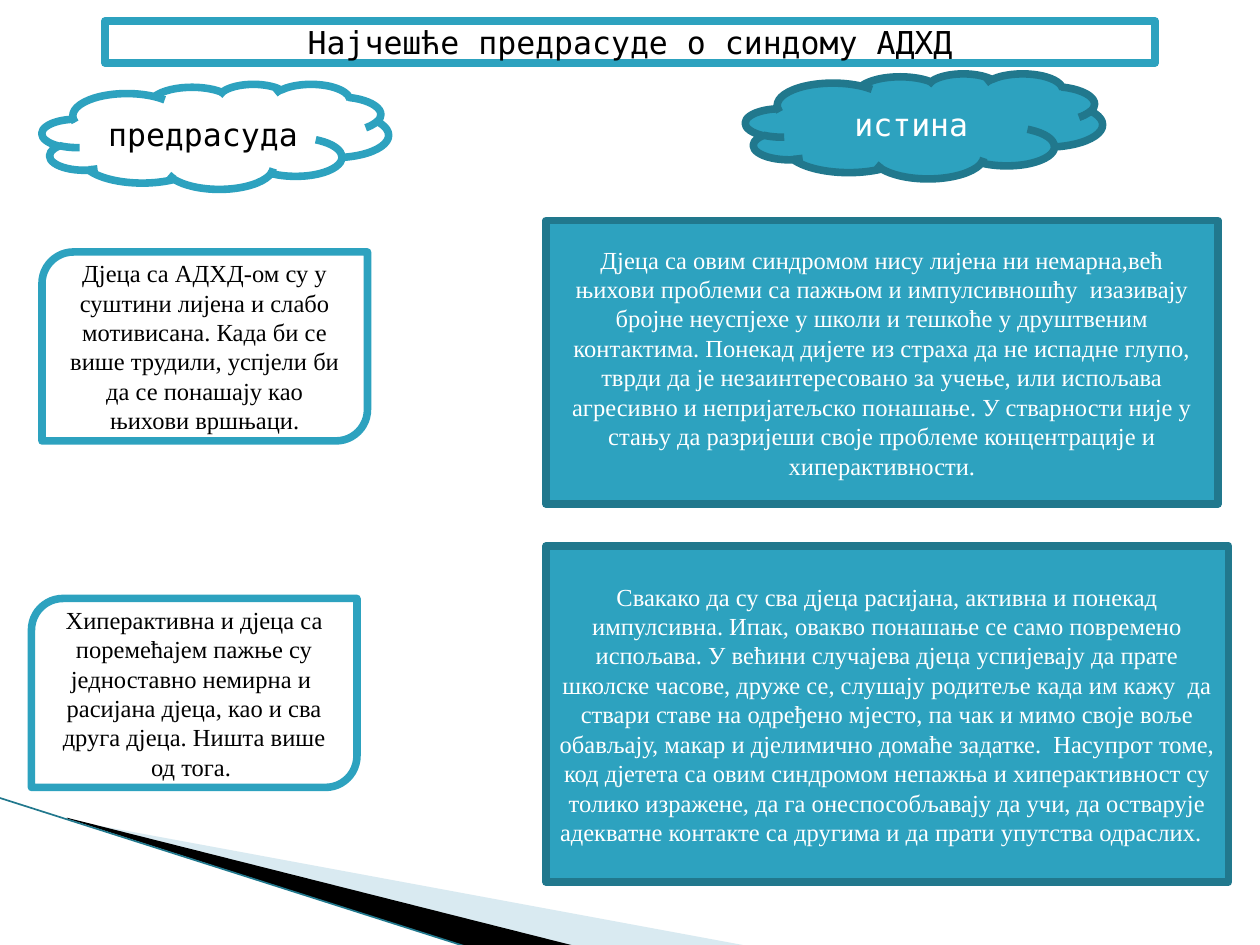
from lxml import etree
from pptx import Presentation
from pptx.dml.color import RGBColor
from pptx.enum.shapes import MSO_CONNECTOR, MSO_SHAPE
from pptx.enum.text import MSO_ANCHOR, PP_ALIGN
from pptx.oxml.ns import qn
from pptx.util import Pt

RECT = MSO_SHAPE.RECTANGLE
LEAF = MSO_SHAPE.ROUND_2_DIAG_RECTANGLE
CLOUD = MSO_SHAPE.CLOUD
STRAIGHT = MSO_CONNECTOR.STRAIGHT
MIDDLE = MSO_ANCHOR.MIDDLE
CENTER = PP_ALIGN.CENTER

COLORS = {
    "white": "FFFFFF",
    "black": "000000",
    "teal": "2DA2BF",
    "dark_teal": "21788D",
    "pale_blue": "A0CBDC",
}
HEADING = ("DejaVu Sans Mono", 18)
BODY = ("Times New Roman", 14)
# Fill, outline and text colour
LIGHT = ("white", "teal", "black")
DARK = ("teal", "dark_teal", "white")


def color(name):
    return RGBColor.from_string(COLORS[name])


deck = Presentation()
deck.slide_width, deck.slide_height = Pt(720), Pt(540)
page = deck.slides.add_slide(deck.slide_layouts[6])

# Corner wedges: fill, opacity in percent, outline points
wedges = [
    ("pale_blue", 40, [(39.6, 468.7), (428.4, 540.7), (328.3, 540.7), (39.6, 468)]),
    ("black", 100, [(38.2, 467.3), (329, 540.7), (267.8, 541.4), (38.9, 468)]),
]
for fill, opacity, points in wedges:
    corners = [(Pt(x), Pt(y)) for x, y in points]
    builder = page.shapes.build_freeform(*corners[0], scale=1.0)
    builder.add_line_segments(corners[1:], close=True)
    wedge = builder.convert_to_shape()
    wedge.shadow.inherit = False
    wedge.fill.solid()
    wedge.fill.fore_color.rgb = color(fill)
    wedge.line.fill.background()
    if opacity < 100:
        tint = wedge.fill._xPr.find(qn("a:solidFill"))[0]
        etree.SubElement(tint, qn("a:alpha"), val=str(opacity * 1000))

# Thin line along the wedges
edge = page.shapes.add_connector(STRAIGHT, Pt(-0.7), Pt(455.8), Pt(267.8), Pt(541.4))
edge.line.color.rgb = color("dark_teal")
edge.line.width = Pt(0.95)
etree.SubElement(edge._element.spPr, qn("a:effectLst"))

# Title, clouds, prejudices on the left and truths on the right
boxes = [
    (RECT, 60, 12, 600, 24, LIGHT, HEADING, "Најчешће предрасуде о синдому АДХД"),
    (LEAF, 24, 144, 186, 108, LIGHT, BODY,
     "Дјеца са АДХД-ом су у суштини лијена и слабо мотивисана. Када би се више "
     "трудили, успјели би да се понашају као њихови вршњаци."),
    (RECT, 312, 126, 384, 162, DARK, BODY,
     "Дјеца са овим синдромом нису лијена ни немарна,већ њихови проблеми са пажњом "
     "и импулсивношћу  изазивају бројне неуспјехе у школи и тешкоће у друштвеним "
     "контактима. Понекад дијете из страха да не испадне глупо, тврди да је "
     "незаинтересовано за учење, или испољава агресивно и непријатељско понашање. "
     "У стварности није у стању да разријеши своје проблеме концентрације и "
     "хиперактивности."),
    (LEAF, 18, 342, 186, 108, LIGHT, BODY,
     "Хиперактивна и дјеца са поремећајем пажње су једноставно немирна и  расијана "
     "дјеца, као и сва друга дјеца. Ништа више од тога. "),
    (CLOUD, 24, 48, 198, 60, LIGHT, HEADING, "предрасуда"),
    (CLOUD, 426, 42, 204, 60, DARK, HEADING, "истина"),
    (RECT, 312, 312, 390, 192, DARK, BODY,
     "Свакако да су сва дјеца расијана, активна и понекад импулсивна. Ипак, овакво "
     "понашање се само повремено испољава. У већини случајева дјеца успијевају да "
     "прате школске часове, друже се, слушају родитеље када им кажу  да ствари "
     "ставе на одређено мјесто, па чак и мимо своје воље обављају, макар и "
     "дјелимично домаће задатке.  Насупрот томе, код дјетета са овим синдромом "
     "непажња и хиперактивност су толико изражене, да га онеспособљавају да учи, "
     "да остварује адекватне контакте са другима и да прати упутства одраслих.  "),
]
for kind, left, top, width, height, style, (font, size), text in boxes:
    fill, outline, ink = style
    box = page.shapes.add_shape(kind, Pt(left), Pt(top), Pt(width), Pt(height))
    box.shadow.inherit = False
    box.fill.solid()
    box.fill.fore_color.rgb = color(fill)
    box.line.color.rgb = color(outline)
    box.line.width = Pt(4.33)
    frame = box.text_frame
    frame.word_wrap = True
    frame.vertical_anchor = MIDDLE
    para = frame.paragraphs[0]
    para.text = text
    para.alignment = CENTER
    para.font.name = font
    para.font.size = Pt(size)
    para.font.color.rgb = color(ink)

deck.save("out.pptx")
